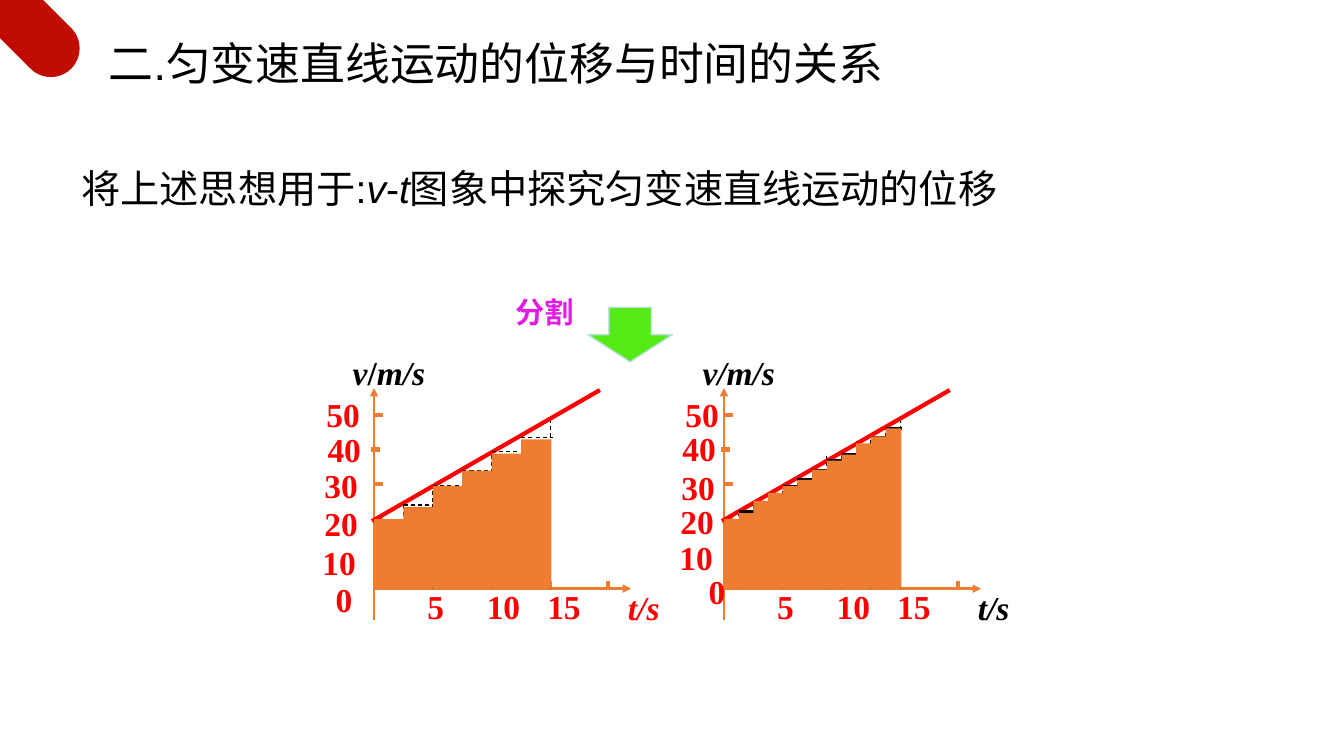
from lxml import etree
from pptx import Presentation
from pptx import util as u
from pptx.dml.color import RGBColor
from pptx.enum import dml, shapes, text
from pptx.oxml import ns

COLORS = {"black": "000000", "red": "FF0000", "orange": "ED7D31", "corner": "C00C03",
          "magenta": "E11BE3", "green": "55EA14", "pale": "BBE0E3"}
SERIF = "Times New Roman"
LABEL_SIZE = 23.9
X_UNIT, Y_UNIT, AREA_WIDTH = 0.58, 0.345, 1.75

COARSE = {
    "origin": (3.71, 5.84),
    "bars": (0.69, 0.81, 1.02, 1.17, 1.34, 1.48),
    "risers": (0.83, 1.02, 1.2, 1.34, 1.52, 1.68),
    "treads": (0.69, 0.83, 1.02, 1.17, 1.36, 1.5),
    "tread_line": (0.75, True),
    "speeds": {"50": (-0.57, -1.98, 1.37), "40": (-0.56, -1.63, 1.18),
               "30": (-0.59, -1.28, 1.14), "20": (-0.59, -0.9, 1.4),
               "10": (-0.61, -0.51, 1.14), "0": (-0.48, -0.14, 0.39)},
    "speed_title": (("v", True), ("/", False), ("m/s", True)),
    "time_color": "red",
}
FINE = {
    "origin": (7.18, 5.84),
    "bars": (0.69, 0.75, 0.87, 0.95, 1.02, 1.08, 1.18, 1.27, 1.33, 1.44, 1.51, 1.59),
    "risers": (0.78, 0.84, 0.94, 1.03, 1.12, 1.2, 1.32, 1.34, 1.46, 1.53, 1.58, 1.68),
    "treads": (0.67, 0.76, 0.84, None, 1.01, 1.08, 1.17, 1.27, 1.33, 1.42, 1.5, 1.59),
    "tread_line": (2.25, False),
    "speeds": {"50": (-0.48, -1.98, 0.76), "40": (-0.51, -1.64, 1.16),
               "30": (-0.52, -1.26, 1.16), "20": (-0.53, -0.92, 1.38),
               "10": (-0.54, -0.56, 1.4), "0": (-0.25, -0.22, 0.37)},
    "speed_title": (("v/m/s", True),),
    "time_color": "black",
}


def rgb(name):
    """Return the named colour."""
    return RGBColor.from_string(COLORS[name])


def add_text(parent, box, runs, size, font, color, bold=False, align=None):
    """Write (text, italic) runs as one paragraph in a box."""
    frame = parent.add_textbox(*map(u.Inches, box)).text_frame
    frame.word_wrap = True
    para = frame.paragraphs[0]
    para.alignment = align
    for words, italic in runs:
        span = para.add_run()
        span.text = words
        span.font.size = u.Pt(size)
        span.font.name = font
        span.font.bold = bold
        span.font.italic = italic
        span.font.color.rgb = rgb(color)


def add_block(parent, kind, box, fill, outline=None):
    """Add a flat filled shape."""
    block = parent.add_shape(kind, *map(u.Inches, box))
    block.shadow.inherit = False
    block.fill.solid()
    block.fill.fore_color.rgb = rgb(fill)
    if outline:
        block.line.color.rgb = rgb(outline)
        block.line.width = u.Pt(1)
    else:
        block.line.fill.background()
    return block


def add_line(parent, start, end, color, width, dashed=False, arrow=False):
    """Draw a straight line, optionally dashed or with an arrowhead."""
    line = parent.add_connector(shapes.MSO_CONNECTOR.STRAIGHT,
                                *map(u.Inches, (*start, *end)))
    line.line.color.rgb = rgb(color)
    line.line.width = u.Pt(width)
    if dashed:
        line.line.dash_style = dml.MSO_LINE.DASH
    if arrow:
        etree.SubElement(line.line._ln, ns.qn("a:tailEnd"), type="triangle")
    etree.SubElement(line._element.spPr, ns.qn("a:effectLst"))


def draw_axes(parent, graph):
    """Draw the axes, ticks and labels around the graph's origin."""
    x, y = graph["origin"]
    add_line(parent, (x, y), (x + 2.55, y), "orange", 2, arrow=True)
    add_line(parent, (x, y + 0.31), (x, y - 1.99), "orange", 2, arrow=True)
    for i in range(1, 5):
        tick = x + i * X_UNIT
        add_line(parent, (tick, y - 0.08), (tick, y + 0.01), "orange", 3)
    for i in range(1, 6):
        tick = y - i * Y_UNIT
        shift = -0.03 if i == 4 else 0
        add_line(parent, (x + 0.09 + shift, tick), (x + shift, tick), "orange", 3)
    for words, (dx, dy, width) in graph["speeds"].items():
        add_text(parent, (x + dx, y + dy, width, 0.5), [(words, False)],
                 LABEL_SIZE, SERIF, "red", True)
    for words, dx in (("5", 0.43), ("10", 1.02), ("15", 1.62)):
        add_text(parent, (x + dx, y - 0.07, 0.56, 0.5), [(words, False)],
                 LABEL_SIZE, SERIF, "red", True)
    add_text(parent, (x - 0.31, y - 2.4, 1.02, 0.5), graph["speed_title"],
             LABEL_SIZE, SERIF, "black", True)
    add_text(parent, (x + 2.42, y - 0.06, 0.81, 0.5), [("t/s", True)],
             LABEL_SIZE, SERIF, graph["time_color"], True)


def draw_steps(parent, graph):
    """Draw the velocity line and the strips that divide the area under it."""
    x, y = graph["origin"]
    step = AREA_WIDTH / len(graph["bars"])
    for i, height in enumerate(graph["risers"], 1):
        add_line(parent, (x + i * step, y), (x + i * step, y - height),
                 "black", 0.75, dashed=True)
    add_line(parent, (x - 0.02, y - 0.67), (x + 2.24, y - 1.97), "red", 3)
    width, dashed = graph["tread_line"]
    for i, height in enumerate(graph["treads"]):
        if height:
            left = x + i * step
            add_line(parent, (left, y - height), (left + step + 0.02, y - height),
                     "black", width, dashed)
    for i, height in enumerate(graph["bars"]):
        add_block(parent, shapes.MSO_SHAPE.RECTANGLE,
                  (x + i * step, y - height, step + 0.01, height), "orange")


def draw_graph(page, graph):
    """Draw one velocity-time graph as a group."""
    group = page.shapes.add_group_shape().shapes
    draw_axes(group, graph)
    draw_steps(group, graph)


def draw_heading(page):
    """Draw the corner bar, the title and the lead sentence."""
    corner = add_block(page.shapes, shapes.MSO_SHAPE.ROUNDED_RECTANGLE,
                       (-2.64, -0.99, 3.92, 0.57), "corner")
    corner.adjustments[0] = 0.5
    corner.rotation = 45
    add_text(page.shapes, (-0.59, 1.58, 11.88, 0.57),
             [("将上述思想用于:", False), ("v", True), ("-", False), ("t", True),
              ("图象中探究匀变速直线运动的位移", False)],
             28, "Arial", "black", align=text.PP_ALIGN.CENTER)
    add_text(page.shapes, (0.98, 0.31, 7.96, 0.64),
             [("二.匀变速直线运动的位移与时间的关系", False)], 32, "Arial", "black")


def draw_division_mark(page, left, top):
    """Draw the division label and its arrow."""
    add_text(page.shapes, (left, top, 1.18, 0.45), [("分割", False)],
             20.9, "Roboto", "magenta", True)
    add_block(page.shapes, shapes.MSO_SHAPE.DOWN_ARROW,
              (left + 0.82, top + 0.18, 0.84, 0.54), "green", "pale")


def main():
    """Build and save the slide."""
    deck = Presentation()
    deck.slide_width, deck.slide_height = u.Inches(13.33), u.Inches(7.5)
    page = deck.slides.add_slide(deck.slide_layouts[6])
    draw_heading(page)
    for graph in (COARSE, FINE):
        draw_graph(page, graph)
    draw_division_mark(page, 5.01, 2.87)
    deck.save("out.pptx")


if __name__ == "__main__":
    main()
